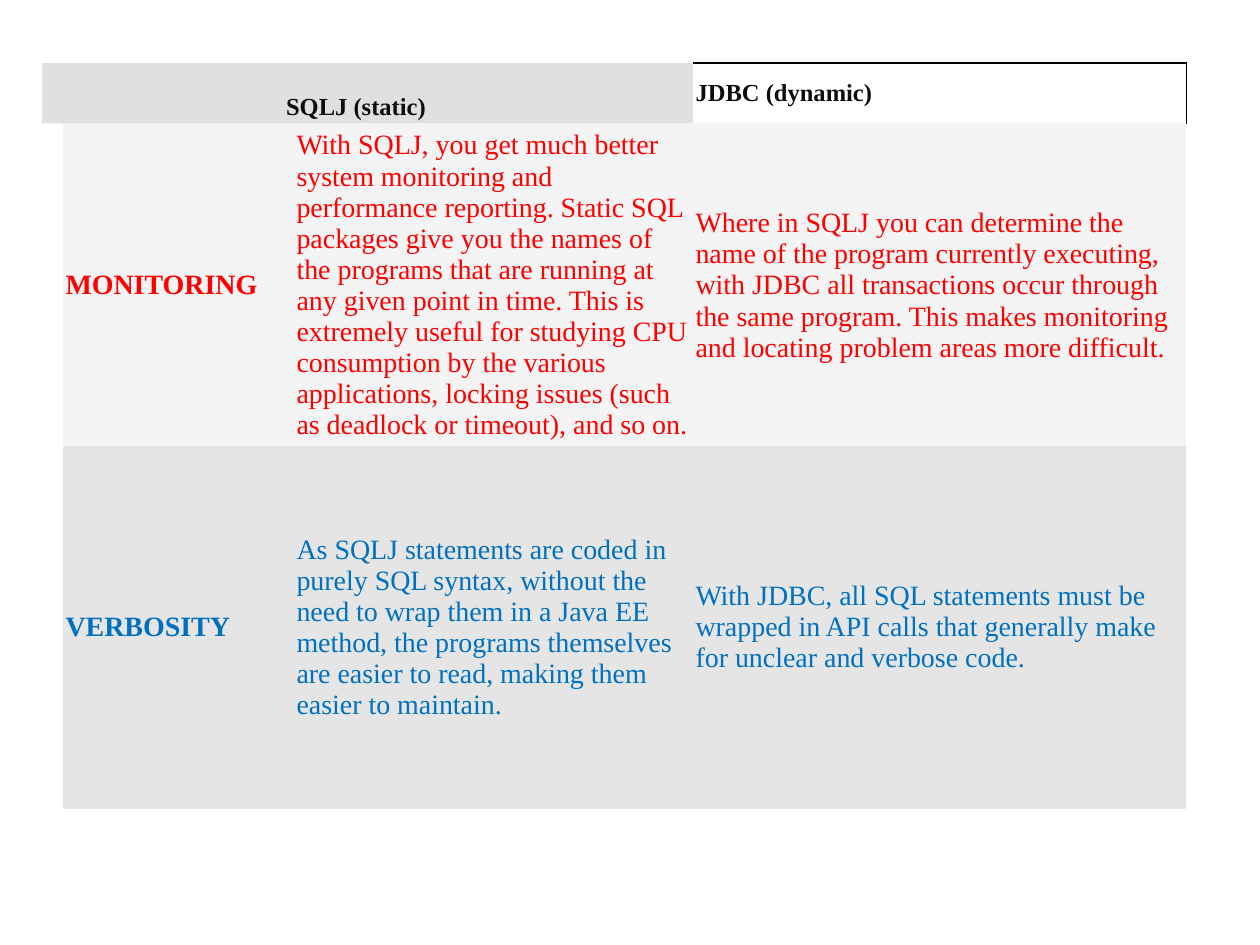
"""Build a slide comparing SQLJ and JDBC on monitoring and verbosity."""
from lxml import etree
from pptx import Presentation
from pptx.dml.color import RGBColor
from pptx.enum.text import MSO_ANCHOR
from pptx.oxml.ns import qn
from pptx.util import Pt

MID, LOW = MSO_ANCHOR.MIDDLE, MSO_ANCHOR.BOTTOM
PX = 9525
PLAIN = "{2D5ABB26-0587-4C30-8999-92F81FD0307C}"
THEME = {
    "font": "Times New Roman", "head": 14, "body": 16,
    "ink": "0D0D0D", "red": "FF0000", "blue": "0070C0", "black": "000000",
    "bar": "E0E0E0", "light": "F4F4F4", "dark": "E5E5E5",
}


def add_grid(slide, left, top, cols, rows):
    frame = slide.shapes.add_table(len(rows), len(cols), left * PX, top * PX,
                                   sum(cols) * PX, sum(rows) * PX)
    grid = frame.table
    grid.first_row = grid.horz_banding = False
    grid._tbl.tblPr.find(qn("a:tableStyleId")).text = PLAIN
    for col, wide in zip(grid.columns, cols):
        col.width = wide * PX
    for row, high in zip(grid.rows, rows):
        row.height = high * PX
    return grid


def fill_cell(cell, text, size, ink, bold, fill, edges, anchor=MID):
    props = cell._tc.get_or_add_tcPr()
    for tag, (tint, width) in edges.items():
        line = etree.SubElement(props, qn(f"a:{tag}"), w=str(Pt(width)))
        solid = etree.SubElement(line, qn("a:solidFill"))
        etree.SubElement(solid, qn("a:srgbClr"), val=THEME[tint])
    if fill:
        cell.fill.solid()
        cell.fill.fore_color.rgb = RGBColor.from_string(THEME[fill])
    else:
        cell.fill.background()
    form = {"vertical_anchor": anchor, "margin_left": 2 * PX, "margin_right": 2 * PX,
            "margin_top": 2 * PX, "margin_bottom": 2 * PX}
    for name, value in form.items():
        setattr(cell, name, value)
    if text:
        run = cell.text_frame.paragraphs[0].add_run()
        run.text = text
        look = {"name": THEME["font"], "size": Pt(THEME[size]), "bold": bold}
        for name, value in look.items():
            setattr(run.font, name, value)
        run.font.color.rgb = RGBColor.from_string(THEME[ink])


deck = Presentation()
deck.slide_width, deck.slide_height = 960 * PX, 720 * PX
slide = deck.slides.add_slide(deck.slide_layouts[6])

topics = [
    ("red", "light", [
        "MONITORING",
        "With SQLJ, you get much better system monitoring and performance reporting. "
        "Static SQL packages give you the names of the programs that are running at any "
        "given point in time. This is extremely useful for studying CPU consumption by the "
        "various applications, locking issues (such as deadlock or timeout), and so on.",
        "Where in SQLJ you can determine the name of the program currently executing, "
        "with JDBC all transactions occur through the same program. This makes monitoring "
        "and locating problem areas more difficult.",
    ]),
    ("blue", "dark", [
        "VERBOSITY",
        "As SQLJ statements are coded in purely SQL syntax, without the need to wrap them "
        "in a Java EE method, the programs themselves are easier to read, making them "
        "easier to maintain.",
        "With JDBC, all SQL statements must be wrapped in API calls that generally make "
        "for unclear and verbose code.",
    ]),
]
body = add_grid(slide, 48, 95, [176, 304, 376], [245, 276])
for row, (ink, fill, texts) in enumerate(topics):
    edges = {"lnT": (fill, 0.75), "lnB": ("dark", 0.75)}
    for col, text in enumerate(texts):
        fill_cell(body.cell(row, col), text, "body", ink, col == 0, fill, edges)

base = {"lnB": ("light", 0.75)}
frame = {"lnR": ("black", 0.75), "lnT": ("black", 1), **base}
heads = [("", "bar", base, MID), ("SQLJ (static)", "bar", base, LOW),
         ("JDBC (dynamic)", None, frame, MID)]
head = add_grid(slide, 32, 48, [184, 312, 376], [46])
for col, (text, fill, edges, anchor) in enumerate(heads):
    fill_cell(head.cell(0, col), text, "head", "ink", True, fill, edges, anchor)

deck.save("out.pptx")
